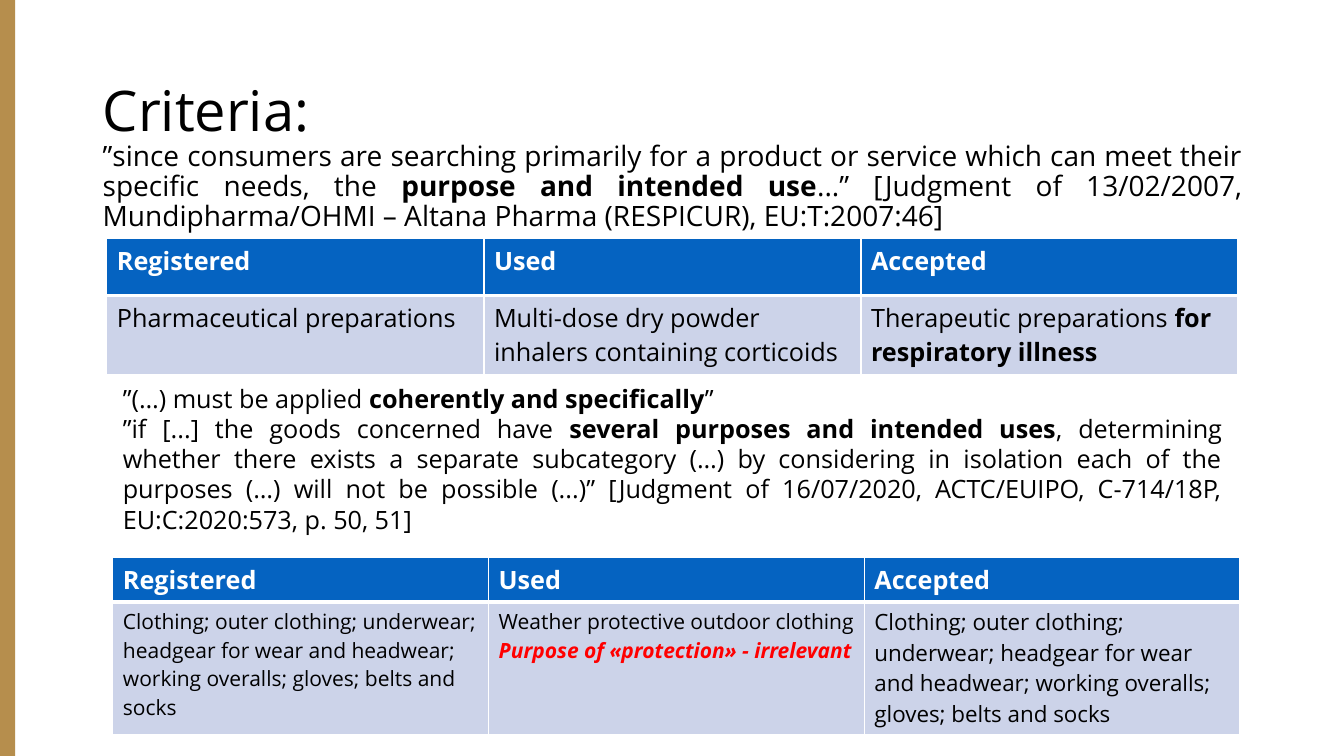
import pptx
import pptx.util
import pptx.dml.color
import pptx.enum.shapes
import pptx.enum.text
import pptx.oxml

colour = pptx.dml.color.RGBColor.from_string
align = pptx.enum.text.PP_ALIGN

presentation = pptx.Presentation()
presentation.slide_width = pptx.util.Inches(13.33)
presentation.slide_height = pptx.util.Inches(7.5)
slide = presentation.slides.add_slide(presentation.slide_layouts[5])


def area(left, top, width, height):
    across = presentation.slide_width / 100
    down = presentation.slide_height / 100
    return [round(length) for length in (left * across, top * down, width * across, height * down)]


def write(frame, lines, size, ink="000000", alignment=align.LEFT, spacing=1.0):
    frame.word_wrap = True
    for number, line in enumerate(lines):
        paragraph = frame.add_paragraph() if number else frame.paragraphs[0]
        paragraph.alignment = alignment
        paragraph.line_spacing = spacing
        paragraph.space_before = pptx.util.Pt(0)
        paragraph.font.name = "Open Sans"
        paragraph.font.size = pptx.util.Pt(size)
        paragraph.font.color.rgb = colour(ink)
        for position, piece in enumerate(line.split("*")):
            if piece:
                run = paragraph.add_run()
                run.text = piece
                run.font.bold = position % 2 == 1


bar = slide.shapes.add_shape(pptx.enum.shapes.MSO_SHAPE.RECTANGLE, *area(0, 0, 1.13, 100))
bar.shadow.inherit = False
bar.fill.solid()
bar.fill.fore_color.rgb = colour("B68E4D")
bar.line.fill.background()

title = slide.shapes.title
title.left, title.top, title.width, title.height = area(6.9, 5.33, 86.27, 19.33)
title.text_frame.auto_size = pptx.enum.text.MSO_AUTO_SIZE.NONE
title.text_frame.vertical_anchor = pptx.enum.text.MSO_ANCHOR.MIDDLE
write(title.text_frame, ["Criteria:"], 40, spacing=0.9)

quotes = [
    (area(6.9, 18.13, 86.27, 72), 20, 0.9, [
        "”since consumers are searching primarily for a product or service which can meet their "
        "specific needs, the *purpose and intended use*...” [Judgment of 13/02/2007, "
        "Mundipharma/OHMI – Altana Pharma (RESPICUR), EU:T:2007:46]",
    ]),
    (area(8.4, 50, 83.27, 21.6), 18, 1.0, [
        "”(…) must be applied *coherently and specifically*”",
        "”if [...] the goods concerned have *several purposes and intended uses*, determining "
        "whether there exists a separate subcategory (…) by considering in isolation each of the "
        "purposes (…) will not be possible (...)” [Judgment of 16/07/2020, ACTC/EUIPO, C-714/18P, "
        "EU:C:2020:573, p. 50, 51]",
    ]),
]
for place, size, spacing, lines in quotes:
    box = slide.shapes.add_textbox(*place)
    write(box.text_frame, lines, size, alignment=align.JUSTIFY, spacing=spacing)

clothing = (
    "Clothing; outer clothing; underwear; headgear for wear and headwear; "
    "working overalls; gloves; belts and socks"
)
comparisons = [
    (area(7.95, 31.6, 84.17, 18), (7.47, 10.53), [
        (18, ["Pharmaceutical preparations"]),
        (18, ["Multi-dose dry powder inhalers containing corticoids"]),
        (18, ["Therapeutic preparations *for respiratory illness*"]),
    ]),
    (area(8.4, 73.73, 83.87, 23.4), (5.9, 17.5), [
        (15, [clothing]),
        (15, ["Weather protective outdoor clothing", "*Purpose of «protection» - irrelevant*"]),
        (16, [clothing]),
    ]),
]
for place, row_shares, goods in comparisons:
    table = slide.shapes.add_table(2, 3, *place).table
    for row, share in zip(table.rows, row_shares):
        row.height = round(share * presentation.slide_height / 100)
    for column, heading in enumerate(["Registered", "Used", "Accepted"]):
        size, lines = goods[column]
        header, body = table.cell(0, column), table.cell(1, column)
        write(header.text_frame, [f"*{heading}*"], 18, ink="FFFFFF")
        write(body.text_frame, lines, size)
        for cell, fill, edge in ((header, "0563C1", "lnB"), (body, "CCD3E9", "lnT")):
            cell.fill.solid()
            cell.fill.fore_color.rgb = colour(fill)
            border = pptx.oxml.parse_xml(
                f'<a:{edge} xmlns:a="http://schemas.openxmlformats.org/drawingml/2006/main" '
                f'w="{pptx.util.Pt(3)}"><a:solidFill><a:srgbClr val="FFFFFF"/></a:solidFill></a:{edge}>'
            )
            cell._tc.get_or_add_tcPr().insert(0, border)

remark = table.cell(1, 1).text_frame.paragraphs[1]
remark.font.color.rgb = colour("FF0000")
remark.font.italic = True

presentation.save("out.pptx")
